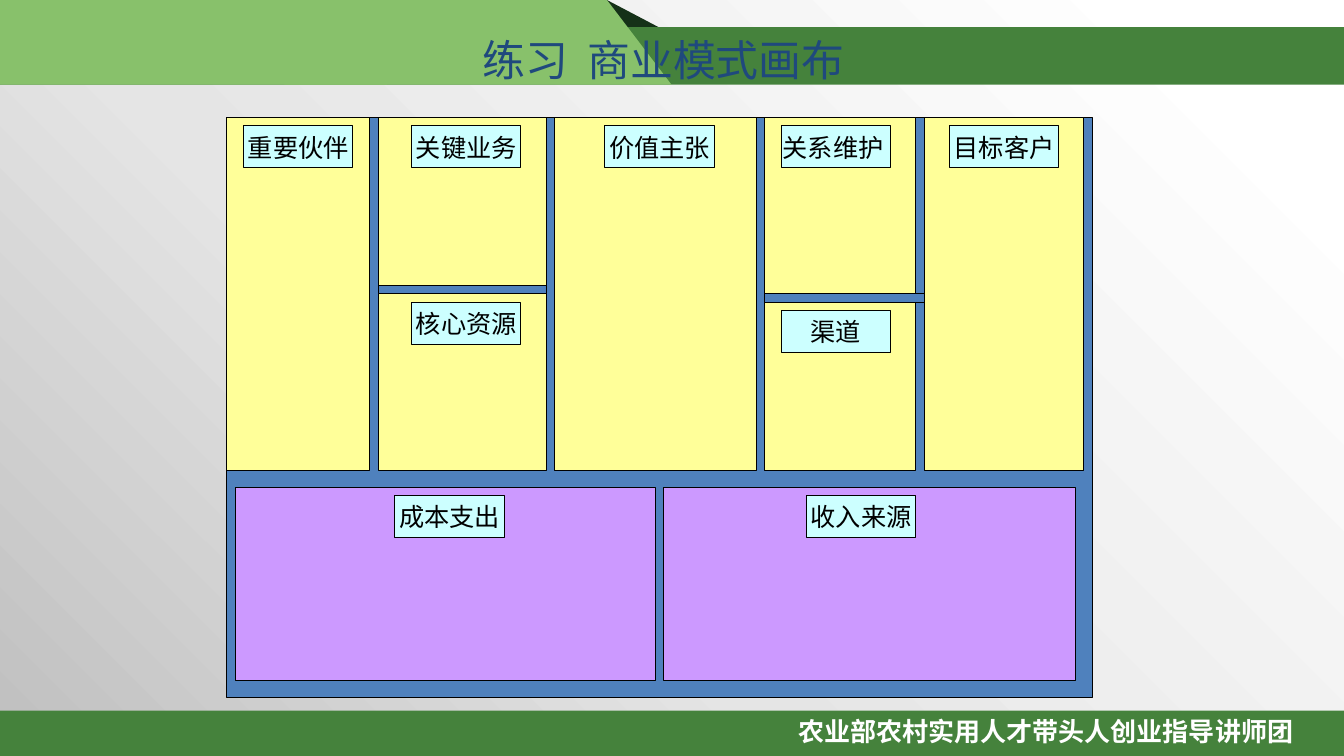
from copy import deepcopy
from dataclasses import dataclass

from pptx import Presentation
from pptx.dml.color import RGBColor as RGB
from pptx.enum.shapes import MSO_SHAPE as Shape
from pptx.enum.text import MSO_ANCHOR as Anchor, PP_ALIGN as Align
from pptx.oxml.ns import qn
from pptx.util import Inches, Pt

COLORS = {
    "white": "FFFFFF", "pale": "E5E5E5", "grey": "BFBFBF", "black": "000000",
    "green": "45823C", "light_green": "88C16B", "dark_green": "153118",
    "blue": "4F81BD", "yellow": "FFFF99", "purple": "CC99FF",
    "cyan": "CCFFFF", "navy": "1F497D",
}
GRID = 1 / 12
TAG_W, TAG_H = 13, 5
BAND_H = 0.84


@dataclass
class Block:
    x: int
    y: int
    w: int
    h: int
    color: str


@dataclass
class Tag:
    text: str
    x: int
    y: int


BLOCKS = [
    Block(27, 14, 103, 69, "blue"),
    *(Block(x, 14, w, 42, "yellow")
      for x, w in [(91, 18), (27, 17), (45, 20), (66, 24), (110, 19)]),
    Block(28, 58, 50, 23, "purple"),
    Block(79, 58, 49, 23, "purple"),
    Block(45, 34, 20, 1, "blue"),
    Block(91, 35, 19, 1, "blue"),
]
TAGS = [
    Tag("重要伙伴", 29, 15), Tag("渠道", 93, 37), Tag("核心资源", 49, 36),
    Tag("关键业务", 49, 15), Tag("目标客户", 113, 15), Tag("关系维护 ", 93, 15),
    Tag("价值主张", 72, 15), Tag("收入来源", 96, 59), Tag("成本支出", 47, 59),
]


def rgb(name: str) -> RGB:
    return RGB.from_string(COLORS[name])


def paint(sp, color: str, outlined: bool = False) -> None:
    sp.shadow.inherit = False
    sp.fill.solid()
    sp.fill.fore_color.rgb = rgb(color)
    if outlined:
        sp.line.color.rgb = rgb("black")
        sp.line.width = Pt(0.75)
    else:
        sp.line.fill.background()


def add_rect(s, x: float, y: float, w: float, h: float, color: str,
             outlined: bool = False):
    sp = s.shapes.add_shape(Shape.RECTANGLE, *map(Inches, (x, y, w, h)))
    paint(sp, color, outlined)
    return sp


def add_block(s, b: Block):
    return add_rect(s, *(v * GRID for v in (b.x, b.y, b.w, b.h)), b.color, True)


def add_polygon(s, points: list[tuple[float, float]], color: str) -> None:
    pts = [(Inches(x), Inches(y)) for x, y in points]
    fb = s.shapes.build_freeform(*pts[0])
    fb.add_line_segments(pts[1:], close=True)
    paint(fb.convert_to_shape(), color)


def write(sp, text: str, font: str, size: float, color: str,
          align: Align = Align.CENTER, bold: bool = False) -> None:
    p = sp.text_frame.paragraphs[0]
    p.alignment = align
    p.add_run().text = text
    p.font.name = font
    p.font.size = Pt(size)
    p.font.bold = bold
    p.font.color.rgb = rgb(color)


def add_text(s, x: float, y: float, w: float, h: float):
    sp = s.shapes.add_textbox(*map(Inches, (x, y, w, h)))
    sp.text_frame.word_wrap = True
    return sp


def add_tag(s, tag: Tag) -> None:
    sp = add_block(s, Block(tag.x, tag.y, TAG_W, TAG_H, "cyan"))
    sp.text_frame.word_wrap = False
    sp.text_frame.vertical_anchor = Anchor.MIDDLE
    write(sp, tag.text, "Cambria", 18, "black")


def add_backdrop(s) -> None:
    sp = add_rect(s, 0, 0, 13.33, 7.5, "white")
    sp.fill.gradient()
    sp.fill.gradient_angle = 225
    gs_list = next(sp._element.spPr.iter(qn("a:gsLst")))
    gs_list.append(deepcopy(gs_list[-1]))
    stops = [(0.09, "white"), (0.62, "pale"), (1, "grey")]
    for stop, (position, color) in zip(sp.fill.gradient_stops, stops):
        stop.position = position
        stop.color.rgb = rgb(color)


def add_frame(s) -> None:
    add_backdrop(s)
    add_rect(s, 0, 7.05, 13.33, 0.45, "green")
    footer = add_text(s, 7.82, 7.05, 5.25, 0.41)
    write(footer, "农业部农村实用人才带头人创业指导讲师团", "Arial", 18.6, "white",
          Align.LEFT, True)
    add_polygon(s, [(6.08, 0.81), (6.02, 0), (7.56, 0.81)], "dark_green")
    add_rect(s, 0, 0.27, 13.33, 0.57, "green")
    for x in (2.82, 0):
        add_polygon(s, [(x, 0), (x + 3.2, 0), (x + 3.84, BAND_H), (x, BAND_H)],
                    "light_green")


def main() -> None:
    """Build the business model canvas exercise slide."""
    prs = Presentation()
    prs.slide_width, prs.slide_height = Inches(13.33), Inches(7.5)
    s = prs.slides.add_slide(prs.slide_layouts[6])
    add_frame(s)
    title = add_text(s, 2.08, 0.28, 9, 0.61)
    title.text_frame.vertical_anchor = Anchor.MIDDLE
    write(title, "练习  商业模式画布", "Montserrat", 30.6, "navy")
    for block in BLOCKS:
        add_block(s, block)
    for tag in TAGS:
        add_tag(s, tag)
    prs.save("out.pptx")


if __name__ == "__main__":
    main()
